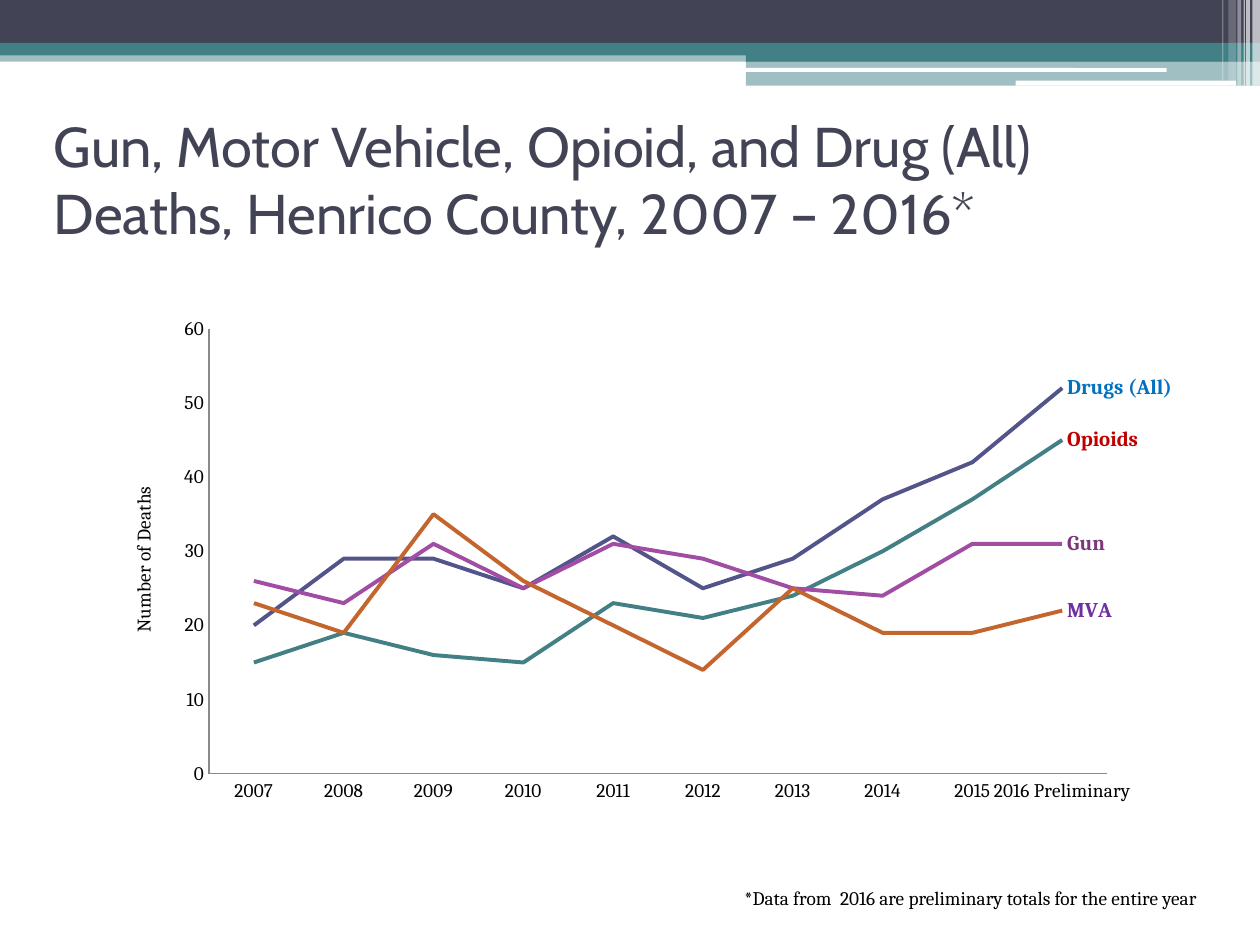
"""Build the Henrico County deaths slide with its line chart."""
from lxml import etree
from pptx import Presentation
from pptx.chart.data import CategoryChartData
from pptx.dml.color import RGBColor
from pptx.enum import chart as kinds, shapes, text
from pptx.oxml import ns
from pptx.util import Inches, Pt

COLORS = {
    "navy": "424456", "teal": "438086", "white": "FFFFFF", "black": "000000",
    "axis": "898989", "indigo": "53548A", "purple": "A04DA3", "orange": "C4652D",
    "blue": "0070C0", "red": "C00000", "plum": "7B3779", "violet": "7030A0",
}


def style(font, size, color, name="Cambria", bold=False):
    """Set the size, colour, face and weight of a font."""
    font.size, font.name, font.bold = Pt(size), name, bold
    font.color.rgb = RGBColor.from_string(COLORS[color])


def write(box, wording, size, color, name, align):
    """Put one middle-anchored run into a box."""
    frame = box.text_frame
    frame.word_wrap = True
    frame.vertical_anchor = text.MSO_ANCHOR.MIDDLE
    para = frame.paragraphs[0]
    para.alignment = align
    span = para.add_run()
    span.text = wording
    style(span.font, size, color, name)


deck = Presentation()
deck.slide_width, deck.slide_height = Inches(10), Inches(7.5)
page = deck.slides.add_slide(deck.slide_layouts[6])

RECT, ROUND = shapes.MSO_SHAPE.RECTANGLE, shapes.MSO_SHAPE.ROUNDED_RECTANGLE
bands = [
    (RECT, 0, 0.4, 10, 0.09, "teal", 50),
    (RECT, 0, 0, 10, 0.34, "navy", 100),
    (RECT, 0, 0.34, 10, 0.1, "teal", 100),
    (RECT, 5.92, 0.39, 4.08, 0.1, "teal", 100),
    (RECT, 5.92, 0.48, 4.08, 0.2, "teal", 50),
    (ROUND, 5.91, 0.54, 3.35, 0.03, "white", 100),
    (ROUND, 8.06, 0.64, 1.75, 0.04, "white", 100),
    (RECT, 9.94, 0, 0.06, 0.68, "white", 65),
    (RECT, 9.89, 0, 0.03, 0.68, "white", 65),
    (RECT, 9.87, 0, 0.01, 0.68, "white", 60),
    (RECT, 9.82, 0, 0.03, 0.68, "white", 40),
    (RECT, 9.75, 0, 0.06, 0.64, "white", 20),
    (RECT, 9.7, 0, 0.01, 0.64, "white", 30),
]
for preset, left, top, width, height, color, opacity in bands:
    band = page.shapes.add_shape(preset, Inches(left), Inches(top), Inches(width), Inches(height))
    band.shadow.inherit = False
    band.line.fill.background()
    band.fill.solid()
    band.fill.fore_color.rgb = RGBColor.from_string(COLORS[color])
    if opacity < 100:
        tint = band.fill._xPr.find(".//" + ns.qn("a:srgbClr"))
        etree.SubElement(tint, ns.qn("a:alpha"), val=str(opacity * 1000))

title = page.shapes.add_textbox(Inches(0.33), Inches(0.83), Inches(9), Inches(1.17))
write(title, "Gun, Motor Vehicle, Opioid, and Drug (All) Deaths, Henrico County, 2007 – 2016*",
      32, "navy", "Cabin", text.PP_ALIGN.LEFT)

footnote = page.shapes.add_shape(ROUND, Inches(5.37), Inches(6.75), Inches(4.67), Inches(0.75))
footnote.shadow.inherit = False
footnote.fill.background()
footnote.line.fill.background()
write(footnote, "*Data from  2016 are preliminary totals for the entire year",
      11, "black", "Cambria", text.PP_ALIGN.CENTER)

deaths = [
    ("Drugs (All) ", "Drugs (All)", "indigo", "blue", [20, 29, 29, 25, 32, 25, 29, 37, 42, 52]),
    ("Series 2", "Opioids", "teal", "red", [15, 19, 16, 15, 23, 21, 24, 30, 37, 45]),
    ("Series 3", "Gun", "purple", "plum", [26, 23, 31, 25, 31, 29, 25, 24, 31, 31]),
    ("Series 4", "MVA", "orange", "violet", [23, 19, 35, 26, 20, 14, 25, 19, 19, 22]),
]
data = CategoryChartData()
data.categories = [str(year) for year in range(2007, 2016)] + ["2016 Preliminary"]
for name, label, color, label_color, values in deaths:
    data.add_series(name, values)
chart = page.shapes.add_chart(kinds.XL_CHART_TYPE.LINE, Inches(0.92), Inches(2.1),
                              Inches(8.9), Inches(5.04), data).chart
chart.has_legend = False
chart.has_title = False
style(chart.font, 10, "black")
chart.plots[0].vary_by_categories = False

for series, (name, label, color, label_color, values) in zip(chart.plots[0].series, deaths):
    series.smooth = False
    series.marker.style = kinds.XL_MARKER_STYLE.NONE
    series.format.line.width = Pt(2.25)
    series.format.line.color.rgb = RGBColor.from_string(COLORS[color])
    tag = series.points[len(values) - 1].data_label
    span = tag.text_frame.paragraphs[0].add_run()
    span.text = label
    style(span.font, 12, label_color, bold=True)
    tag.position = kinds.XL_LABEL_POSITION.RIGHT

for axis in (chart.category_axis, chart.value_axis):
    axis.has_major_gridlines = False
    axis.major_tick_mark = axis.minor_tick_mark = kinds.XL_TICK_MARK.NONE
    axis.format.line.width = Pt(0.75)
    axis.format.line.color.rgb = RGBColor.from_string(COLORS["axis"])
    style(axis.tick_labels.font, 11, "black")
chart.value_axis.minimum_scale = 0
chart.value_axis.maximum_scale = 60
chart.value_axis.major_unit = 10
span = chart.value_axis.axis_title.text_frame.paragraphs[0].add_run()
span.text = "Number of Deaths"
style(span.font, 11, "black")

plot_area = chart.plots[0]._element.getparent()
for old in plot_area.findall(ns.qn("c:layout")):
    plot_area.remove(old)
layout = etree.Element(ns.qn("c:layout"))
manual = etree.SubElement(layout, ns.qn("c:manualLayout"))
for key, value in [("layoutTarget", "inner"), ("xMode", "edge"), ("yMode", "edge"),
                   ("x", "0.083"), ("y", "0.101"), ("w", "0.801"), ("h", "0.701")]:
    etree.SubElement(manual, ns.qn("c:" + key), val=value)
plot_area.insert(0, layout)

deck.save("out.pptx")
